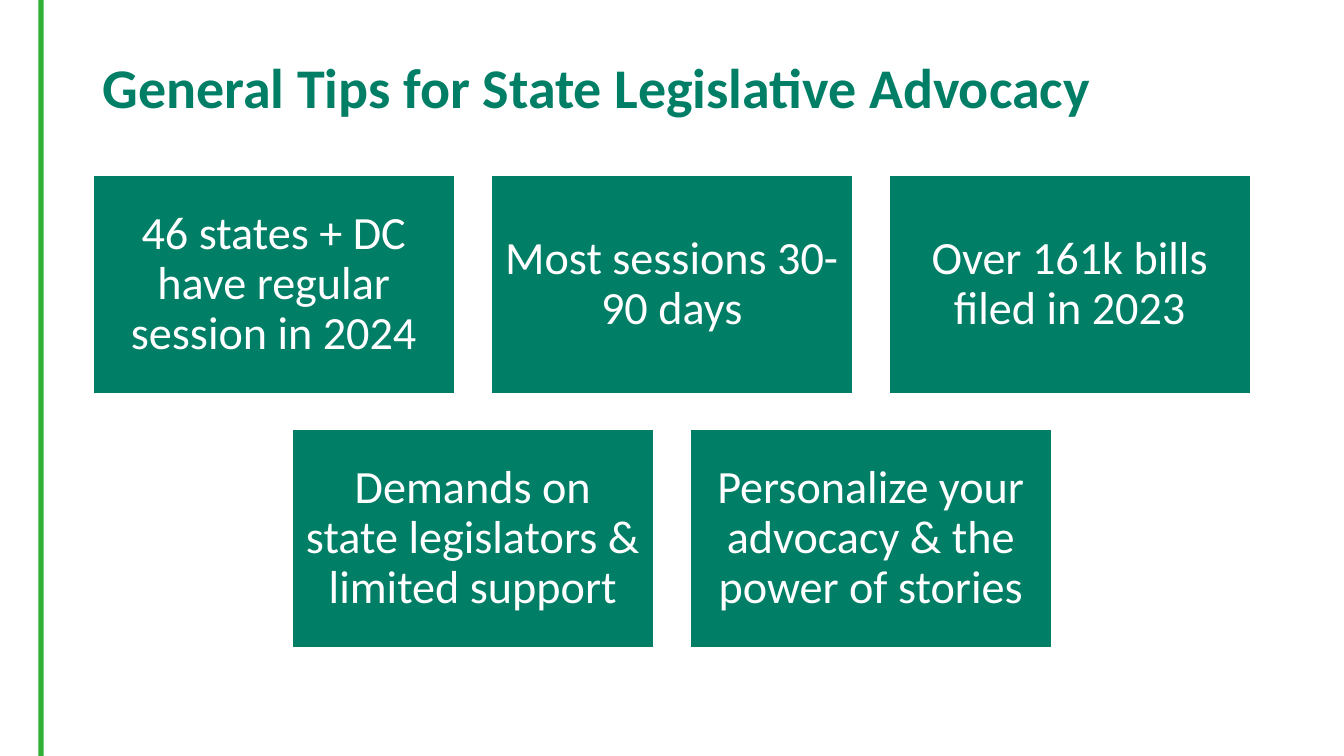
import pptx
import pptx.dml.color
import pptx.enum.shapes
import pptx.enum.text
import pptx.util

Cm = pptx.util.Cm
Pt = pptx.util.Pt

COLORS = {"green": "007E66", "stripe": "2EB135", "white": "FFFFFF"}
FONT = "Calibri"
TIP_ROWS = [
    [
        "46 states + DC have regular session in 2024",
        "Most sessions 30-90 days",
        "Over 161k bills filed in 2023",
    ],
    [
        "Demands on state legislators & limited support",
        "Personalize your advocacy & the power of stories",
    ],
]


def color(name):
    return pptx.dml.color.RGBColor.from_string(COLORS[name])


def add_rectangle(slide, left, top, width, height, fill):
    shape = slide.shapes.add_shape(
        pptx.enum.shapes.MSO_SHAPE.RECTANGLE,
        Cm(left), Cm(top), Cm(width), Cm(height))
    shape.shadow.inherit = False
    shape.fill.solid()
    shape.fill.fore_color.rgb = color(fill)
    shape.line.fill.background()
    return shape


def write_text(shape, text, size, font_color, bold=False):
    frame = shape.text_frame
    frame.word_wrap = True
    frame.vertical_anchor = pptx.enum.text.MSO_ANCHOR.MIDDLE
    paragraph = frame.paragraphs[0]
    paragraph.text = text
    paragraph.line_spacing = 0.9
    paragraph.font.name = FONT
    paragraph.font.size = Pt(size)
    paragraph.font.bold = bold
    paragraph.font.color.rgb = color(font_color)
    return paragraph


def add_title(slide, left, top, width, height, text):
    box = slide.shapes.add_textbox(Cm(left), Cm(top), Cm(width), Cm(height))
    write_text(box, text, 40, "green", bold=True)


def add_card(slide, left, top, width, height, text):
    card = add_rectangle(slide, left, top, width, height, "green")
    card.line.color.rgb = color("white")
    card.line.width = Pt(1)
    frame = card.text_frame
    frame.margin_left = frame.margin_right = Cm(0.35)
    frame.margin_top = frame.margin_bottom = Cm(0.35)
    paragraph = write_text(card, text, 33, "white")
    paragraph.alignment = pptx.enum.text.PP_ALIGN.CENTER


def add_card_rows(slide, left, top, width, height, rows, gap=0.91):
    """Fill the box with equal cards, centring the shorter rows."""
    columns = max(len(row) for row in rows)
    card_width = (width - gap * (columns - 1)) / columns
    card_height = (height - gap * (len(rows) - 1)) / len(rows)
    for row_index, row in enumerate(rows):
        indent = (columns - len(row)) * (card_width + gap) / 2
        card_top = top + row_index * (card_height + gap)
        for column, text in enumerate(row):
            card_left = left + indent + column * (card_width + gap)
            add_card(slide, card_left, card_top, card_width, card_height, text)


def main():
    presentation = pptx.Presentation()
    presentation.slide_width = Cm(33.87)
    presentation.slide_height = Cm(19.05)
    slide = presentation.slides.add_slide(presentation.slide_layouts[6])

    # Stripe along the left edge
    add_rectangle(slide, 0.97, 0, 0.13, 19.05, "stripe")

    # Title
    add_title(slide, 2.34, 1.02, 30.38, 2.54,
              "General Tips for State Legislative Advocacy")

    # Tip cards
    add_card_rows(slide, 2.34, 4.43, 29.18, 11.89, TIP_ROWS)

    presentation.save("out.pptx")


if __name__ == "__main__":
    main()
